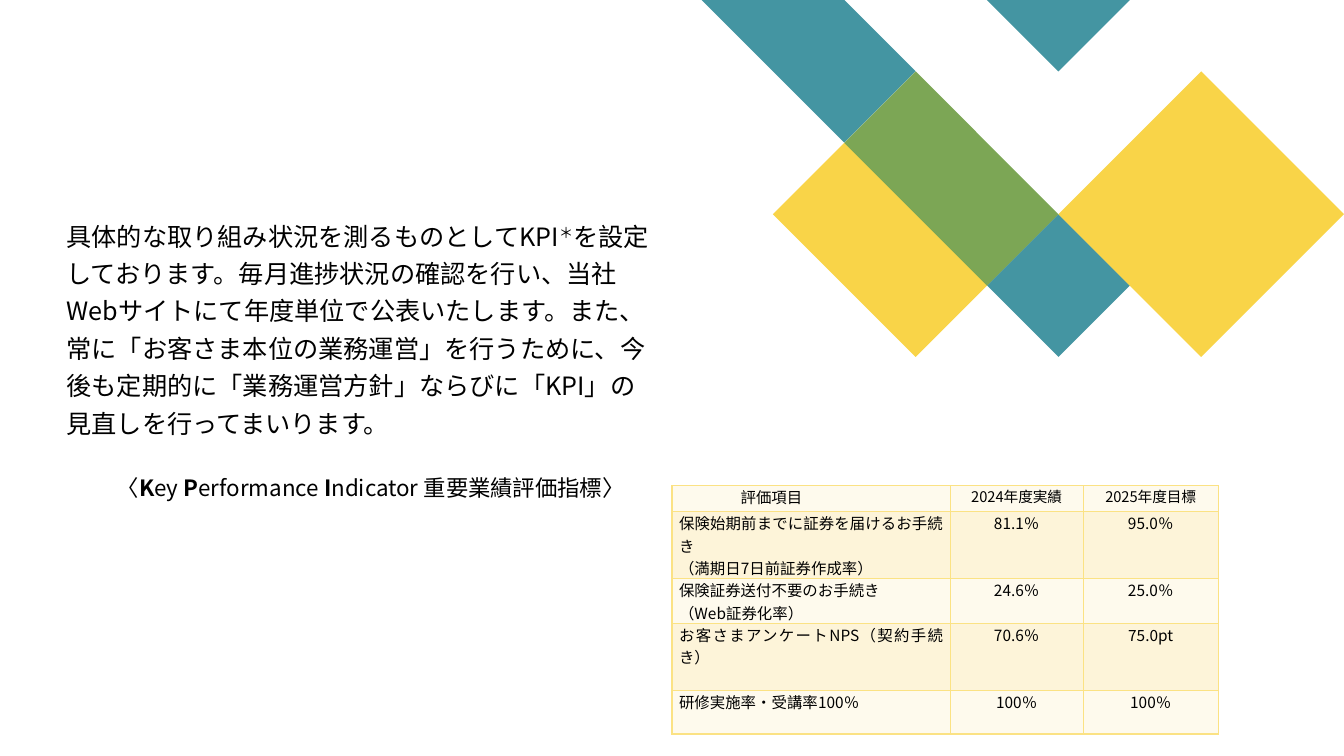
from dataclasses import dataclass

from lxml import etree
from pptx import Presentation
from pptx.dml.color import RGBColor
from pptx.enum.text import MSO_ANCHOR, PP_ALIGN
from pptx.oxml.ns import qn
from pptx.util import Emu, Inches, Pt

LEFT, CENTER, JUSTIFY = PP_ALIGN.LEFT, PP_ALIGN.CENTER, PP_ALIGN.JUSTIFY
TOP = MSO_ANCHOR.TOP


@dataclass(frozen=True)
class Theme:
    font: str = "Noto Sans CJK JP"
    text: str = "000000"
    teal: str = "4495A2"
    yellow: str = "F9D448"
    green: str = "7CA655"
    border: str = "FBE284"
    row_fills: tuple = ("FEFAED", "FDF4D9")
    body: float = 18
    note: float = 16
    cell: float = 11
    heading: float = 10.5


class SlideBuilder:
    """Places elements on a 100 by 100 grid; diamonds use their own square lattice."""

    def __init__(self, presentation, theme):
        self.theme = theme
        self.column = presentation.slide_width / 100
        self.row = presentation.slide_height / 100
        self.lattice = Inches(0.71 * 0.9975)
        self.lattice_left = presentation.slide_width - 9 * self.lattice
        self.slide = presentation.slides.add_slide(presentation.slide_layouts[6])

    def x(self, columns):
        return Emu(round(columns * self.column))

    def y(self, rows):
        return Emu(round(rows * self.row))

    def style_run(self, run, size, bold=False):
        run.font.size = Pt(size)
        run.font.bold = bold
        run.font.name = self.theme.font
        run.font.color.rgb = RGBColor.from_string(self.theme.text)
        east_asian = etree.SubElement(run._r.get_or_add_rPr(), qn("a:ea"))
        east_asian.set("typeface", self.theme.font)

    def indent(self, paragraph, points):
        paragraph._p.get_or_add_pPr().set("marL", str(Pt(points)))

    def polygon(self, color, *contours):
        points = [[(round(self.lattice_left + column * self.lattice),
                    round(row * self.lattice)) for column, row in contour]
                  for contour in contours]
        builder = self.slide.shapes.build_freeform(*points[0][0])
        builder.add_line_segments(points[0][1:])
        for contour in points[1:]:
            builder.move_to(*contour[0])
            builder.add_line_segments(contour[1:])
        shape = builder.convert_to_shape()
        shape.shadow.inherit = False
        shape.fill.solid()
        shape.fill.fore_color.rgb = RGBColor.from_string(color)
        shape.line.fill.background()

    def text_box(self, left, top, width, height, paragraphs):
        """Each paragraph is (size, indent, space before, [(text, style), ...])."""
        box = self.slide.shapes.add_textbox(
            self.x(left), self.y(top), self.x(width), self.y(height))
        frame = box.text_frame
        frame.word_wrap = True
        frame.vertical_anchor = TOP
        frame.margin_left = frame.margin_right = frame.margin_bottom = 0
        frame.margin_top = Inches(0.05)
        for index, (size, indent, space, pieces) in enumerate(paragraphs):
            paragraph = frame.paragraphs[0] if index == 0 else frame.add_paragraph()
            paragraph.line_spacing = 1.24
            paragraph.space_before = Pt(space)
            self.indent(paragraph, indent)
            for text, style in pieces:
                run = paragraph.add_run()
                run.text = text
                self.style_run(run, size, style == "bold")
                if style == "superscript":
                    run._r.get_or_add_rPr().set("baseline", "30000")

    def border_cell(self, cell):
        properties = cell._tc.get_or_add_tcPr()
        for index, side in enumerate(("lnL", "lnR", "lnT", "lnB")):
            line = etree.Element(qn(f"a:{side}"), w=str(Pt(1)))
            fill = etree.SubElement(line, qn("a:solidFill"))
            etree.SubElement(fill, qn("a:srgbClr"), val=self.theme.border)
            properties.insert(index, line)

    def table(self, left, top, widths, heights, rows):
        table = self.slide.shapes.add_table(
            len(rows), len(widths), self.x(left), self.y(top),
            self.x(sum(widths)), self.y(sum(heights))).table
        for column, width in zip(table.columns, widths):
            column.width = self.x(width)
        for row_index, (height, texts) in enumerate(zip(heights, rows)):
            table.rows[row_index].height = self.y(height)
            for column_index, text in enumerate(texts):
                self.fill_cell(table.cell(row_index, column_index), text,
                               row_index, column_index)

    def fill_cell(self, cell, text, row_index, column_index):
        is_header, is_label = row_index == 0, column_index == 0
        cell.fill.solid()
        cell.fill.fore_color.rgb = RGBColor.from_string(
            self.theme.row_fills[row_index % 2])
        cell.margin_left = cell.margin_right = Inches(0.07)
        cell.margin_top = cell.margin_bottom = 0
        cell.vertical_anchor = TOP
        cell.text_frame.text = text
        size = self.theme.heading if is_header and not is_label else self.theme.cell
        for paragraph in cell.text_frame.paragraphs:
            if not is_label:
                paragraph.alignment = CENTER
            elif is_header:
                paragraph.alignment = LEFT
                self.indent(paragraph, 4 * size)
            else:
                paragraph.alignment = JUSTIFY
            for run in paragraph.runs:
                self.style_run(run, size)
        self.border_cell(cell)


def main():
    presentation = Presentation()
    presentation.slide_width = Inches(40 / 3)
    presentation.slide_height = Inches(7.5)
    theme = Theme()
    builder = SlideBuilder(presentation, theme)

    # Diamond pattern, in lattice columns and rows
    builder.polygon(theme.teal, [(3, 1), (2, 0), (0, 0), (2, 2), (3, 1)],
                    [(6, 4), (5, 3), (4, 4), (5, 5), (6, 4)])
    builder.polygon(theme.yellow, [(2, 2), (1, 3), (3, 5), (4, 4), (2, 2)])
    builder.polygon(theme.teal, [(6, 0), (4, 0), (5, 1), (6, 0)])
    builder.polygon(theme.green, [(3, 1), (2, 2), (4, 4), (5, 3), (3, 1)])
    builder.polygon(theme.yellow, [(9, 3), (7, 1), (5, 3), (7, 5), (9, 3)])

    # Explanation and the meaning of KPI
    builder.text_box(4.95, 27.6, 43.9, 50.25, [
        (theme.body, 0, 0, [
            ("具体的な取り組み状況を測るものとしてKPI", ""),
            ("＊", "superscript"),
            ("を設定しております。毎月進捗状況の確認を行い、当社Webサイトにて"
             "年度単位で公表いたします。また、常に「お客さま本位の業務運営」を行うために、"
             "今後も定期的に「業務運営方針」ならびに「KPI」の見直しを行ってまいります。", "")]),
        (theme.note, 2 * theme.body, 21, [
            ("〈", ""), ("K", "bold"), ("ey ", ""), ("P", "bold"), ("erformance ", ""),
            ("I", "bold"), ("ndicator 重要業績評価指標〉", "")]),
    ])

    # Results and targets
    builder.table(50, 64.25, [20.7, 9.9, 10.05], [3.45, 8.85, 5.95, 8.8, 5.8], [
        ("評価項目", "2024年度実績", "2025年度目標"),
        ("保険始期前までに証券を届けるお手続き\n（満期日7日前証券作成率）", "81.1％", "95.0％"),
        ("保険証券送付不要のお手続き\n（Web証券化率）", "24.6％", "25.0％"),
        ("お客さまアンケートNPS（契約手続き）", "70.6％", "75.0pt"),
        ("研修実施率・受講率100％", "100％", "100％"),
    ])

    presentation.save("out.pptx")


if __name__ == "__main__":
    main()
